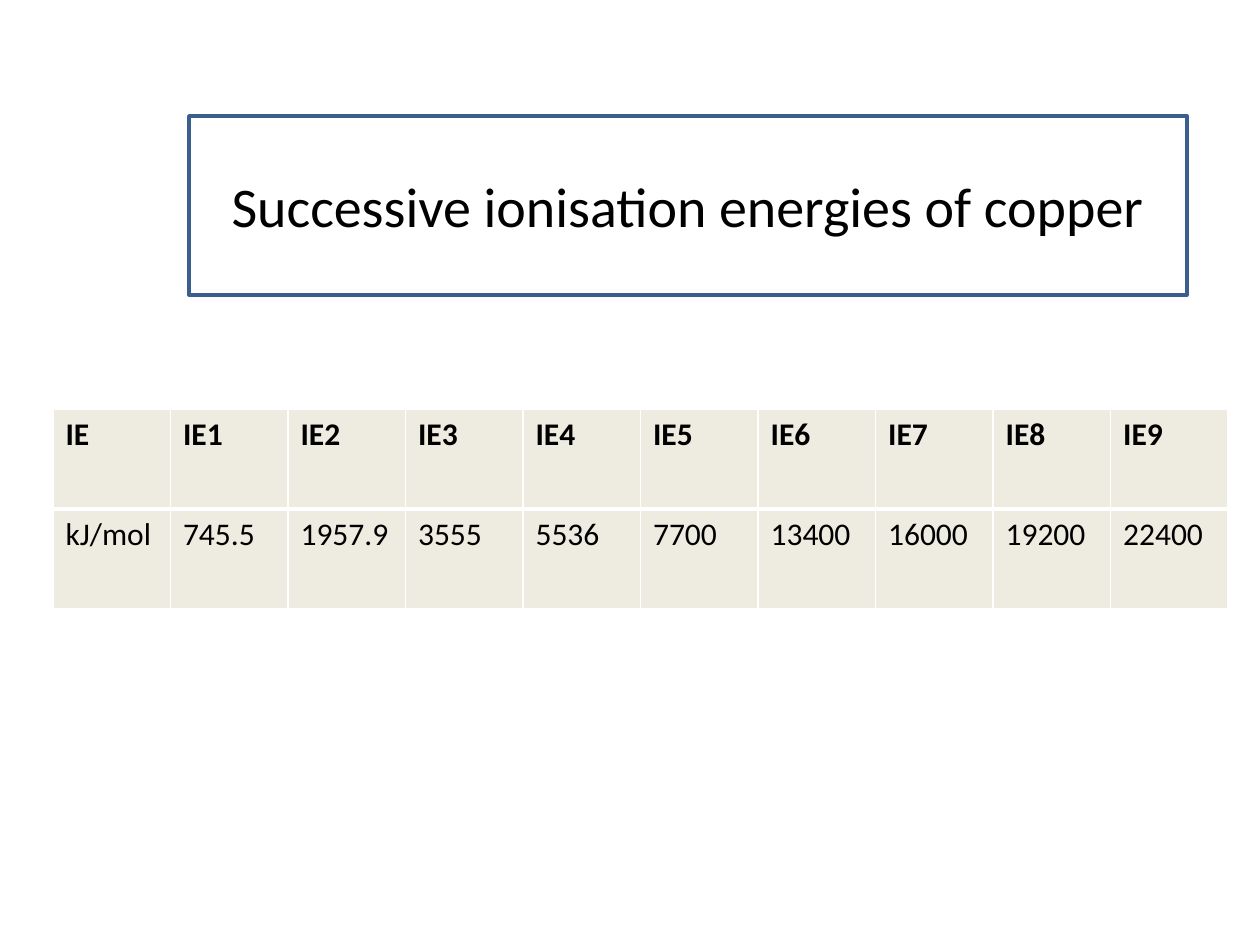
"""Build a slide tabulating the successive ionisation energies of copper."""
from dataclasses import dataclass

from lxml import etree
from pptx import Presentation
from pptx.dml.color import RGBColor
from pptx.enum import text
from pptx.oxml import ns
from pptx.util import Inches, Pt


@dataclass(frozen=True)
class Theme:
    font: str = "Calibri"
    ink: str = "000000"
    paper: str = "FFFFFF"
    frame: str = "3A5F8C"
    cell: str = "EEECE1"
    title_size: int = 32
    cell_size: int = 18
    frame_width: int = 2
    thin: int = 1
    thick: int = 3


theme = Theme()


def style_text(frame, size, bold):
    for paragraph in frame.paragraphs:
        for run in paragraph.runs:
            run.font.name = theme.font
            run.font.size = Pt(size)
            run.font.bold = bold
            run.font.color.rgb = RGBColor.from_string(theme.ink)


def set_borders(cell, widths):
    properties = cell._tc.get_or_add_tcPr()
    for position, (side, width) in enumerate(widths.items()):
        border = etree.Element(ns.qn(f"a:ln{side}"), w=str(Pt(width)))
        fill = etree.SubElement(border, ns.qn("a:solidFill"))
        etree.SubElement(fill, ns.qn("a:srgbClr"), val=theme.paper)
        properties.insert(position, border)


prs = Presentation()
prs.slide_width, prs.slide_height = Inches(10), Inches(7.5)
slide = prs.slides.add_slide(prs.slide_layouts[5])

title = slide.shapes.title
title.left, title.top = Inches(1.5), Inches(0.92)
title.width, title.height = Inches(7.92), Inches(1.42)
title.fill.solid()
title.fill.fore_color.rgb = RGBColor.from_string(theme.paper)
title.line.color.rgb = RGBColor.from_string(theme.frame)
title.line.width = Pt(theme.frame_width)
title.text_frame.text = "Successive ionisation energies of copper"
title.text_frame.auto_size = text.MSO_AUTO_SIZE.NONE
title.text_frame.vertical_anchor = text.MSO_ANCHOR.MIDDLE
title.text_frame.paragraphs[0].alignment = text.PP_ALIGN.CENTER
style_text(title.text_frame, theme.title_size, False)

energies = ["745.5", "1957.9", "3555", "5536", "7700", "13400", "16000", "19200", "22400"]
labels = ["IE"] + [f"IE{number}" for number in range(1, len(energies) + 1)]
rows = [labels, ["kJ/mol"] + energies]

table = slide.shapes.add_table(
    len(rows), len(labels), Inches(0.42), Inches(3.25), Inches(9.33), Inches(1.58)
).table

for row_index, values in enumerate(rows):
    is_header = row_index == 0
    widths = {
        "L": theme.thin,
        "R": theme.thin,
        "T": theme.thin if is_header else theme.thick,
        "B": theme.thick if is_header else theme.thin,
    }
    for column_index, value in enumerate(values):
        cell = table.cell(row_index, column_index)
        cell.text_frame.text = value
        cell.fill.solid()
        cell.fill.fore_color.rgb = RGBColor.from_string(theme.cell)
        style_text(cell.text_frame, theme.cell_size, is_header)
        set_borders(cell, widths)

prs.save("out.pptx")
